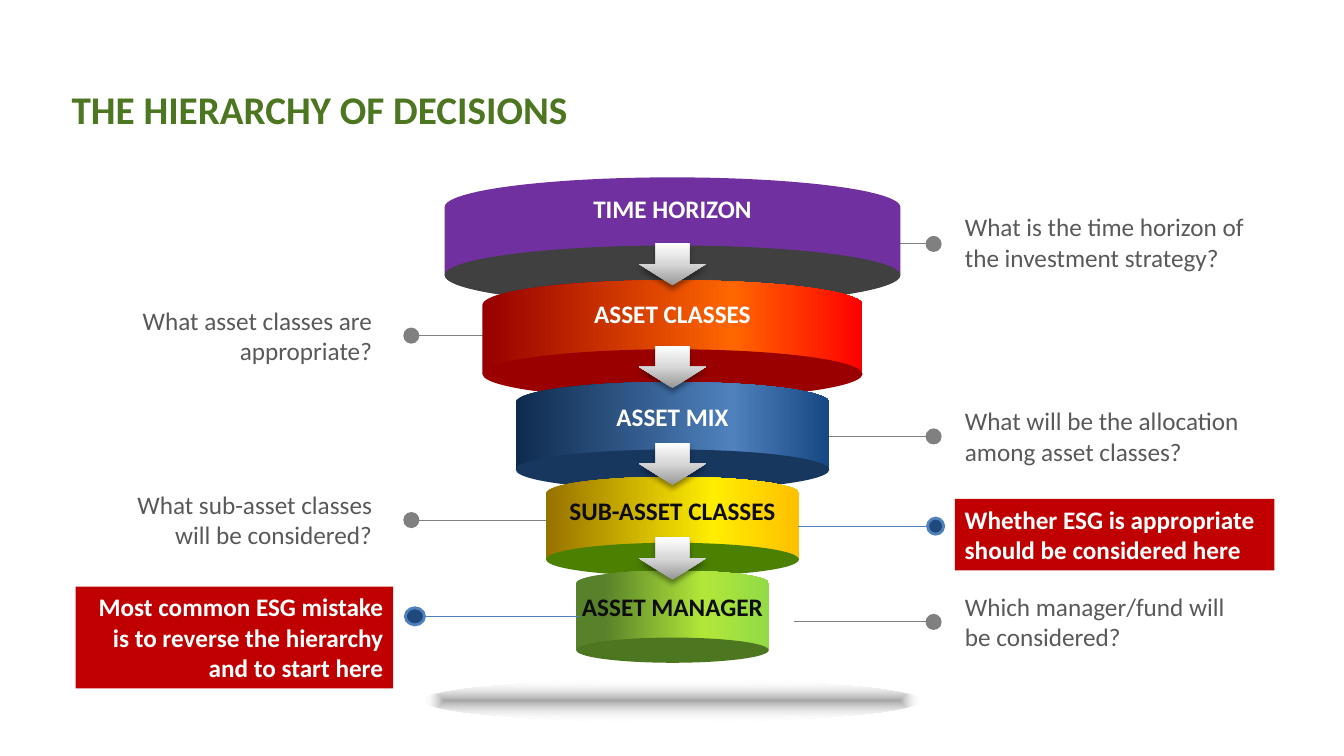
import math
from lxml import etree
from pptx import Presentation
from pptx.dml.color import RGBColor
from pptx.enum.shapes import MSO_CONNECTOR, MSO_SHAPE
from pptx.enum.text import MSO_ANCHOR, PP_ALIGN
from pptx.oxml.ns import qn
from pptx.util import Inches, Pt

STRAIGHT = MSO_CONNECTOR.STRAIGHT
OVAL, DOWN_ARROW = MSO_SHAPE.OVAL, MSO_SHAPE.DOWN_ARROW
LEFT, CENTER, RIGHT = PP_ALIGN.LEFT, PP_ALIGN.CENTER, PP_ALIGN.RIGHT
TOP, MIDDLE = MSO_ANCHOR.TOP, MSO_ANCHOR.MIDDLE

COLORS = {
    "title": "4D7620", "question": "595959", "white": "FFFFFF", "ink": "0D0D0D",
    "leader": "808080", "esg_line": "4F81BD", "esg_dot": "1F497D", "alert": "C00000",
    "purple": "7030A0", "charcoal": "404040", "dark_red": "9A0000", "navy": "17375E",
    "dark_green": "4B8000", "moss": "4D7620",
}
RGB = {name: RGBColor.from_string(value) for name, value in COLORS.items()}
AXIS = 6.67  # vertical axis of the funnel

prs = Presentation()
prs.slide_width, prs.slide_height = Inches(13.33), Inches(7.5)
slide = prs.slides.add_slide(prs.slide_layouts[6])
shapes = slide.shapes


def paint_gradient(shape, stops, direction, **settings):
    """Fill with (position %, colour, opacity %) stops along a direction element."""
    shape.fill.gradient()
    gradient = shape.element.spPr.find(qn("a:gradFill"))
    for child in list(gradient):
        gradient.remove(child)
    stop_list = etree.SubElement(gradient, qn("a:gsLst"))
    for position, color, opacity in stops:
        stop = etree.SubElement(stop_list, qn("a:gs"), pos=str(position * 1000))
        rgb = etree.SubElement(stop, qn("a:srgbClr"), val=color)
        if opacity < 100:
            etree.SubElement(rgb, qn("a:alpha"), val=str(opacity * 1000))
    return etree.SubElement(gradient, qn(direction), **settings)


def add_leader(start, end, y, dot_box, line_color, dot_color, outline):
    line = shapes.add_connector(STRAIGHT, Inches(start), Inches(y), Inches(end), Inches(y))
    line.line.color.rgb = RGB[line_color]
    line.line.width = Pt(0.75)
    etree.SubElement(line.element.spPr, qn("a:effectLst"))
    dot = shapes.add_shape(OVAL, *map(Inches, dot_box))
    dot.shadow.inherit = False
    dot.fill.solid()
    dot.fill.fore_color.rgb = RGB[dot_color]
    if outline:
        dot.line.color.rgb = RGB[line_color]
        dot.line.width = Pt(outline)
    else:
        dot.line.fill.background()


# Grey leaders, partly hidden by the funnel
for start, end, y, dot_left in [
    (7.88, 9.22, 2.42, 9.18), (7.88, 9.22, 4.33, 9.18), (7.88, 9.22, 6.17, 9.18),
    (5.45, 4.12, 3.33, 4), (5.45, 4.12, 5.16, 4),
]:
    add_leader(start, end, y, (dot_left, y - 0.08, 0.16, 0.16), "leader", "leader", 0)

# Funnel tiers: width, top, base centre, rim height, body fill, base colour
tiers = [
    (4.52, 1.76, 2.73, 0.59, "purple", "charcoal"),
    (3.77, 2.78, 3.71, 0.49, [(0, "970000", 100), (66, "FF6600", 100), (100, "FF0000", 100)], "dark_red"),
    (3.11, 3.79, 4.66, 0.4, [(0, "0E2B4E", 100), (69, "4F81BD", 100), (100, "184884", 100)], "navy"),
    (2.51, 4.73, 5.55, 0.33, [(0, "977200", 100), (66, "FFED01", 100), (100, "FFC000", 100)], "dark_green"),
    (1.91, 5.66, 6.45, 0.25, [(14, "57812A", 100), (66, "B1E739", 100), (100, "92DA46", 100)], "moss"),
]
for width, top, base_y, rim, body_fill, base_color in tiers:
    radius = width / 2
    arc = [
        (Inches(AXIS - radius * math.cos(math.pi * step / 40)),
         Inches(top + rim / 2 * (1 - math.sin(math.pi * step / 40))))
        for step in range(41)
    ]
    outline = shapes.build_freeform(Inches(AXIS - radius), Inches(base_y))
    outline.add_line_segments(arc + [(Inches(AXIS + radius), Inches(base_y))], close=True)
    body = outline.convert_to_shape()
    if isinstance(body_fill, str):
        body.fill.solid()
        body.fill.fore_color.rgb = RGB[body_fill]
    else:
        paint_gradient(body, body_fill, "a:lin", ang="0", scaled="0")
    base = shapes.add_shape(OVAL, Inches(AXIS - radius), Inches(base_y - rim / 2),
                            Inches(width), Inches(rim))
    base.fill.solid()
    base.fill.fore_color.rgb = RGB[base_color]
    for part in (body, base):
        part.line.fill.background()
        part.shadow.inherit = False

# Soft shade on the floor
floor = shapes.add_shape(OVAL, Inches(4.2), Inches(6.74), Inches(4.93), Inches(0.42))
floor.shadow.inherit = False
floor.line.fill.background()
shade = paint_gradient(floor, [(0, "808080", 70), (100, "FFFFFF", 0)], "a:path", path="shape")
etree.SubElement(shade, qn("a:fillToRect"), l="50000", t="50000", r="50000", b="50000")

# Arrows between tiers
for arrow_top in (2.41, 3.43, 4.39, 5.33):
    arrow = shapes.add_shape(DOWN_ARROW, Inches(AXIS - 0.33), Inches(arrow_top),
                             Inches(0.66), Inches(0.42))
    arrow.line.fill.background()
    arrow.shadow.inherit = False
    paint_gradient(arrow, [(0, "979797", 100), (50, "D7D7D7", 100), (100, "FFFFFF", 100)],
                   "a:lin", ang=str(270 * 60000), scaled="0")
    drop = etree.SubElement(
        arrow.element.spPr.find(qn("a:effectLst")), qn("a:outerShdw"),
        blurRad=str(Pt(4)), dist=str(Pt(3)), dir=str(90 * 60000), algn="t", rotWithShape="0")
    drop_color = etree.SubElement(drop, qn("a:srgbClr"), val="000000")
    etree.SubElement(drop_color, qn("a:alpha"), val="40000")

# ESG leaders
add_leader(7.91, 9.24, 5.22, (9.2, 5.14, 0.16, 0.16), "esg_line", "esg_dot", 2)
add_leader(5.75, 4.16, 6.12, (4.02, 6.03, 0.19, 0.17), "esg_line", "esg_dot", 2)

# Text styles and wording
styles = {
    "title": dict(size=28, bold=True, color="title", align=LEFT, wrap=True),
    "right": dict(size=18, bold=False, color="question", align=LEFT, wrap=True),
    "left": dict(size=18, bold=False, color="question", align=RIGHT, wrap=True),
    "light": dict(size=18, bold=True, color="white", align=CENTER, wrap=False),
    "dark": dict(size=18, bold=True, color="ink", align=CENTER, wrap=False),
    "alert_right": dict(size=18, bold=True, color="white", align=LEFT, wrap=True, fill="alert"),
    "alert_left": dict(size=18, bold=True, color="white", align=RIGHT, wrap=True, fill="alert"),
}
label_left, label_width = AXIS - 1.08, 2.16
texts = [
    ("title", (0.71, 0.69, 5.16, 0.78), "THE HIERARCHY OF DECISIONS"),
    ("right", (9.57, 1.76, 3.16, 1.28), "What is the time horizon of the investment strategy?"),
    ("right", (9.57, 3.93, 2.96, 0.79), "What will be the allocation among asset classes?"),
    ("right", (9.57, 5.77, 2.69, 0.79), "Which manager/fund will be considered?"),
    ("left", (1, 2.77, 2.69, 1.11), "What asset classes are appropriate?"),
    ("left", (1, 4.8, 2.69, 0.71), "What sub-asset classes will be considered?"),
    ("light", (label_left, 1.87, label_width, 0.4), "TIME HORIZON"),
    ("light", (label_left, 2.91, label_width, 0.4), "ASSET CLASSES"),
    ("light", (label_left, 3.93, label_width, 0.4), "ASSET MIX"),
    ("dark", (label_left, 4.86, label_width, 0.4), "SUB-ASSET CLASSES"),
    ("dark", (label_left, 5.82, label_width, 0.4), "ASSET MANAGER"),
    ("alert_right", (9.47, 4.95, 3.17, 0.71), "Whether ESG is appropriate should be considered here"),
    ("alert_left", (0.75, 5.82, 3.15, 1.01),
     "Most common ESG mistake is to reverse the hierarchy and to start here"),
]
for style_name, box, wording in texts:
    style = styles[style_name]
    caption = shapes.add_textbox(*map(Inches, box))
    frame = caption.text_frame
    frame.word_wrap = style["wrap"]
    if "fill" in style:
        caption.fill.solid()
        caption.fill.fore_color.rgb = RGB[style["fill"]]
        frame.vertical_anchor = TOP
    else:
        frame.vertical_anchor = MIDDLE
        for side in ("left", "top", "right", "bottom"):
            setattr(frame, f"margin_{side}", 0)
    paragraph = frame.paragraphs[0]
    paragraph.alignment = style["align"]
    run = paragraph.add_run()
    run.text = wording
    for name, value in {"name": "Calibri", "size": Pt(style["size"]), "bold": style["bold"]}.items():
        setattr(run.font, name, value)
    run.font.color.rgb = RGB[style["color"]]

prs.save("out.pptx")
